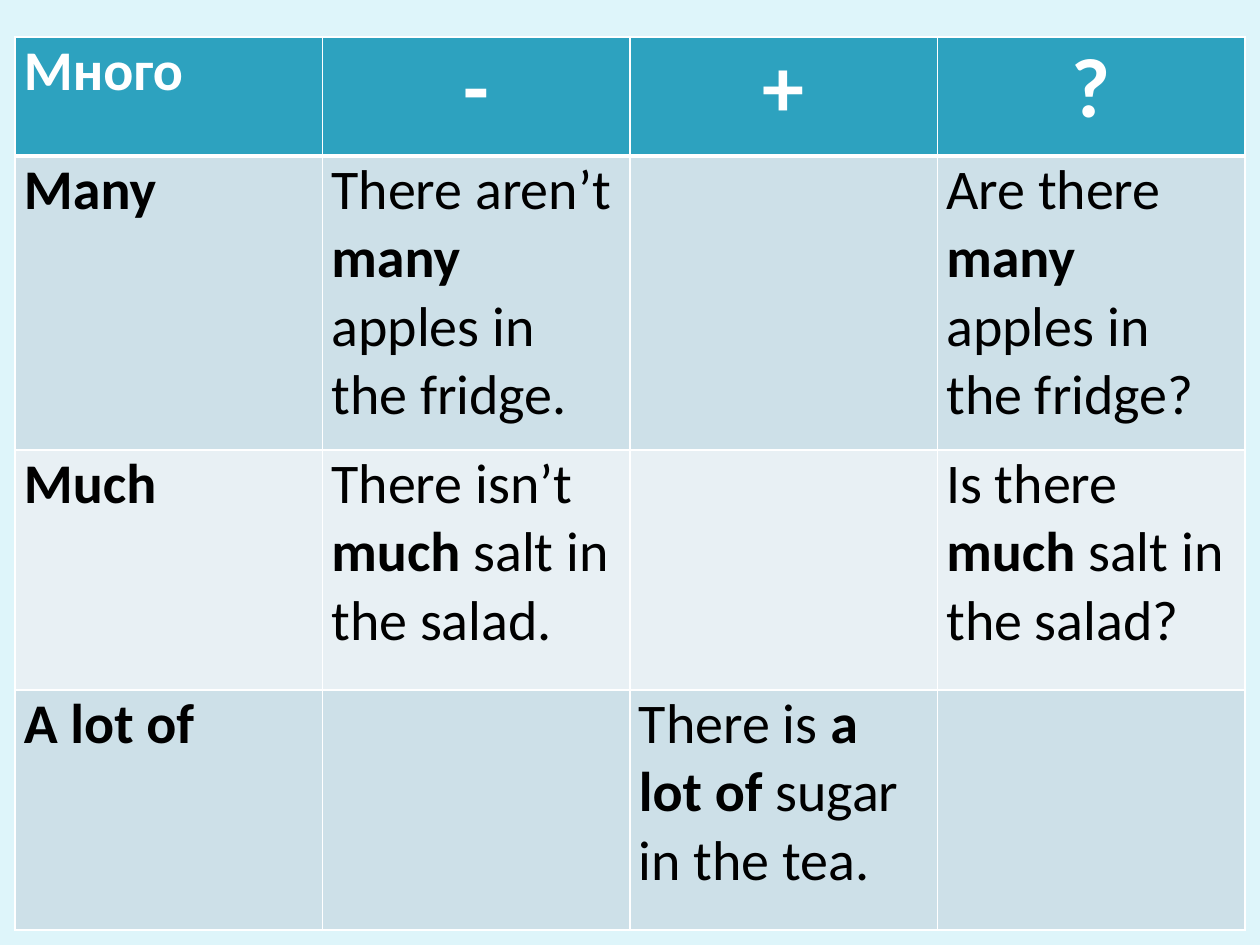
import pptx
import pptx.util
import pptx.dml.color
import pptx.enum.text
import lxml.etree

SCALE = 914400 / 126
COLORS = {
    "background": "DEF5FA",
    "header": "2DA2BF",
    "band_dark": "CDE0E8",
    "band_light": "E8F0F4",
    "border": "FFFFFF",
    "header_text": "FFFFFF",
    "body_text": "000000",
}
ROW_HEIGHTS = [119, 294, 240, 240]
ROW_FILLS = ["header", "band_dark", "band_light", "band_dark"]
GRAMMAR = [
    ["*Много*", "*-*", "*+*", "*?*"],
    ["*Many*", "There aren’t *many* apples in the fridge.", "",
     "Are there *many *apples in the fridge?"],
    ["*Much*", "There isn’t *much* salt in the salad.", "",
     "Is there *much* salt in the salad?"],
    ["*A lot of*", "", "There is *a lot of *sugar in the tea.", ""],
]


def px(length):
    return pptx.util.Emu(round(length * SCALE))


def rgb(name):
    return pptx.dml.color.RGBColor.from_string(COLORS[name])


def add_borders(cell, bottom_points):
    properties = cell._tc.get_or_add_tcPr()
    for side, points in zip("LRTB", (1, 1, 1, bottom_points)):
        border = lxml.etree.SubElement(
            properties, pptx.oxml.ns.qn(f"a:ln{side}"), w=str(pptx.util.Pt(points)))
        fill = lxml.etree.SubElement(border, pptx.oxml.ns.qn("a:solidFill"))
        lxml.etree.SubElement(
            fill, pptx.oxml.ns.qn("a:srgbClr"), val=COLORS["border"])


def write_phrase(cell, phrase, size, color, centered):
    paragraph = cell.text_frame.paragraphs[0]
    paragraph.font.name = "Calibri"
    paragraph.font.size = pptx.util.Pt(size)
    paragraph.font.color.rgb = rgb(color)
    if centered:
        paragraph.alignment = pptx.enum.text.PP_ALIGN.CENTER
    for index, part in enumerate(phrase.split("*")):
        if part:
            run = paragraph.add_run()
            run.text = part
            run.font.bold = index % 2 == 1


def add_grammar_table(slide, left, top, width, height):
    table = slide.shapes.add_table(
        len(GRAMMAR), len(GRAMMAR[0]), px(left), px(top), px(width), px(height)).table
    for column in table.columns:
        column.width = px(width / len(GRAMMAR[0]))
    for row, row_height in zip(table.rows, ROW_HEIGHTS):
        row.height = px(height * row_height / sum(ROW_HEIGHTS))
    for row_index, phrases in enumerate(GRAMMAR):
        is_header = row_index == 0
        for column_index, phrase in enumerate(phrases):
            cell = table.cell(row_index, column_index)
            cell.margin_left = cell.margin_right = px(9)
            cell.margin_top = cell.margin_bottom = 0
            add_borders(cell, 3 if is_header else 1)
            cell.fill.solid()
            cell.fill.fore_color.rgb = rgb(ROW_FILLS[row_index])
            is_sign = is_header and column_index > 0
            if phrase:
                write_phrase(cell, phrase, 48 if is_sign else 32,
                             "header_text" if is_header else "body_text", is_sign)


def main():
    presentation = pptx.Presentation()
    presentation.slide_width = px(1260)
    presentation.slide_height = px(945)
    slide = presentation.slides.add_slide(presentation.slide_layouts[6])
    slide.background.fill.solid()
    slide.background.fill.fore_color.rgb = rgb("background")
    add_grammar_table(slide, 15, 37, 1230, sum(ROW_HEIGHTS))
    presentation.save("out.pptx")


if __name__ == "__main__":
    main()
